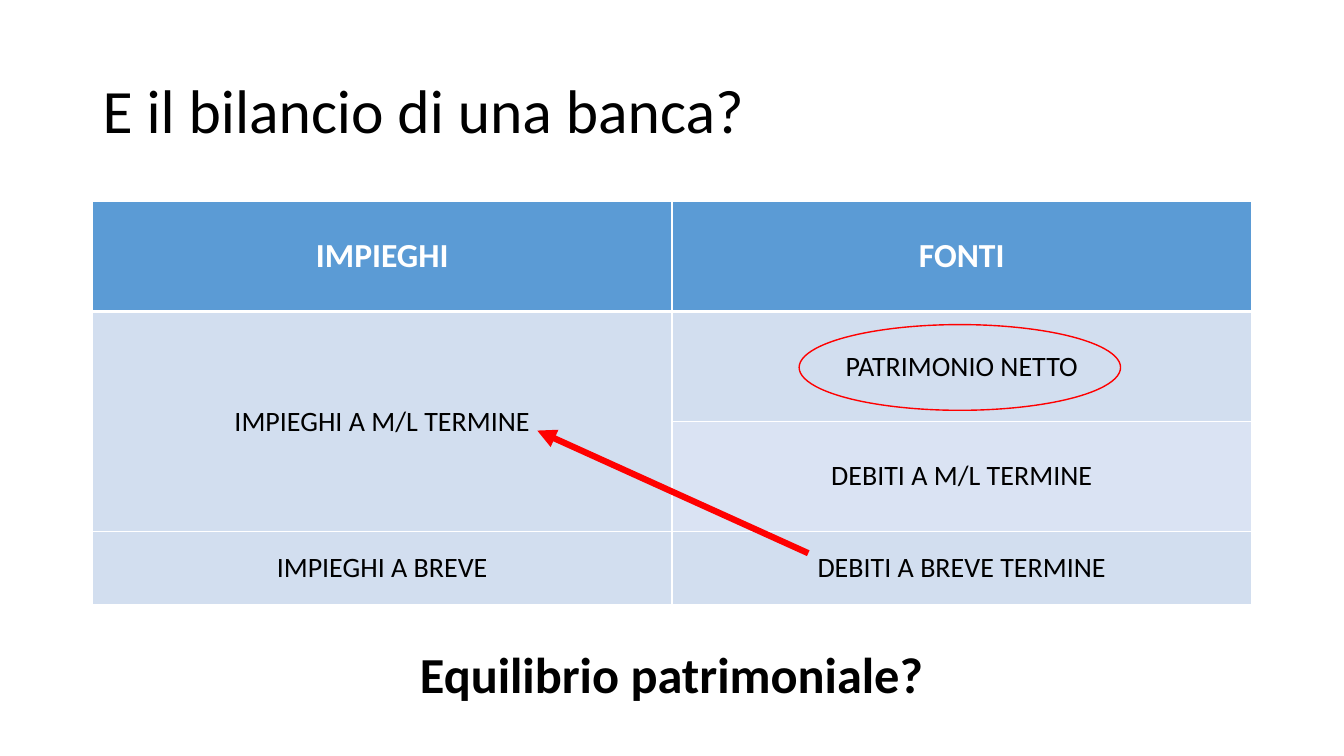
from collections import namedtuple

from lxml import etree
from pptx import Presentation
from pptx.dml.color import RGBColor
from pptx.enum.dml import MSO_FILL
from pptx.enum.shapes import MSO_CONNECTOR, MSO_SHAPE
from pptx.enum.text import MSO_ANCHOR, MSO_AUTO_SIZE, PP_ALIGN
from pptx.oxml.ns import qn
from pptx.util import Cm, Pt

LEFT, CENTER = PP_ALIGN.LEFT, PP_ALIGN.CENTER
MIDDLE, TOP = MSO_ANCHOR.MIDDLE, MSO_ANCHOR.TOP
NO_FIT, GROW = MSO_AUTO_SIZE.NONE, MSO_AUTO_SIZE.SHAPE_TO_FIT_TEXT
STRAIGHT, ELLIPSE = MSO_CONNECTOR.STRAIGHT, MSO_SHAPE.OVAL

Box = namedtuple("Box", "left top width height")
BLACK, WHITE, RED = "000000", "FFFFFF", "FF0000"
HEADER_BLUE, BAND_DARK, BAND_LIGHT = "5B9BD5", "D2DEEF", "DAE3F3"
TITLE_FORMAT = {"size": Pt(44), "bold": False}
HEADER_FORMAT = {"size": Pt(24), "bold": True}
BODY_FORMAT = {"size": Pt(20), "bold": False}
QUESTION_FORMAT = {"size": Pt(36), "bold": True}

ROW_HEIGHTS = [2.77, 2.77, 2.77, 1.85]
BALANCE_ROWS = [
    ("IMPIEGHI", "FONTI"),
    ("IMPIEGHI A M/L TERMINE", "PATRIMONIO NETTO"),
    ("", "DEBITI A M/L TERMINE"),
    ("IMPIEGHI A BREVE", "DEBITI A BREVE TERMINE"),
]
ROW_FILLS = [
    (HEADER_BLUE, HEADER_BLUE),
    (BAND_DARK, BAND_DARK),
    (BAND_DARK, BAND_LIGHT),
    (BAND_DARK, BAND_DARK),
]


def color(value):
    return RGBColor.from_string(value)


def lengths(box):
    return [Cm(value) for value in box]


def write(frame, text, font_format, font_color=BLACK, align=CENTER):
    para = frame.paragraphs[0]
    para.alignment = align
    span = para.add_run()
    span.text = text
    span.font.name = "Calibri"
    span.font.color.rgb = color(font_color)
    for name, value in font_format.items():
        setattr(span.font, name, value)
    return para


def add_title(page, box, text):
    title = page.shapes.title
    title.left, title.top, title.width, title.height = lengths(box)
    frame = title.text_frame
    frame.vertical_anchor = MIDDLE
    frame.auto_size = NO_FIT
    para = write(frame, text, TITLE_FORMAT, align=LEFT)
    para.line_spacing = 0.9


def add_borders(cell, widths):
    properties = cell._tc.get_or_add_tcPr()
    for side, width in widths.items():
        line = etree.SubElement(properties, qn(f"a:ln{side}"), w=str(Pt(width)))
        fill = etree.SubElement(line, qn("a:solidFill"))
        etree.SubElement(fill, qn("a:srgbClr"), val=WHITE)


def add_balance_table(page, box):
    table = page.shapes.add_table(
        len(BALANCE_ROWS), len(BALANCE_ROWS[0]), *lengths(box)
    ).table
    for row, height in zip(table.rows, ROW_HEIGHTS):
        row.height = Cm(height)
    for row_index, texts in enumerate(BALANCE_ROWS):
        is_header = row_index == 0
        font_format = HEADER_FORMAT if is_header else BODY_FORMAT
        font_color = WHITE if is_header else BLACK
        widths = {
            "L": 1,
            "R": 1,
            "T": 3 if row_index == 1 else 1,
            "B": 3 if is_header else 1,
        }
        for column_index, text in enumerate(texts):
            cell = table.cell(row_index, column_index)
            cell.vertical_anchor = MIDDLE
            add_borders(cell, widths)
            cell.fill.solid()
            cell.fill.fore_color.rgb = color(ROW_FILLS[row_index][column_index])
            if text:
                write(cell.text_frame, text, font_format, font_color)
    table.cell(1, 0).merge(table.cell(2, 0))


def add_question(page, box, text):
    frame = page.shapes.add_textbox(*lengths(box)).text_frame
    frame.word_wrap = True
    frame.auto_size = GROW
    frame.vertical_anchor = TOP
    write(frame, text, QUESTION_FORMAT)


def add_highlights(page, box):
    arrow = page.shapes.add_connector(
        STRAIGHT,
        Cm(box.left + 18.04),
        Cm(box.top + 8.86),
        Cm(box.left + 11.21),
        Cm(box.top + 5.77),
    )
    arrow.line.color.rgb = color(RED)
    arrow.line.width = Pt(4.5)
    etree.SubElement(arrow.line._get_or_add_ln(), qn("a:tailEnd"), type="triangle")
    etree.SubElement(arrow._element.spPr, qn("a:effectLst"))

    ring_box = Box(box.left + 17.81, box.top + 3.1, 8.1, 2.16)
    ring = page.shapes.add_shape(ELLIPSE, *lengths(ring_box))
    ring.shadow.inherit = False
    ring.fill.background()
    ring.line.color.rgb = color(RED)
    ring.line.width = Pt(1)


def build_balance_page(deck):
    page = deck.slides.add_slide(deck.slide_layouts[5])
    table_box = Box(2.33, 5.08, 29.21, sum(ROW_HEIGHTS))
    add_title(page, Box(2.33, 1.01, 29.21, 3.68), "E il bilancio di una banca?")
    add_balance_table(page, table_box)
    add_question(page, Box(8.61, 16.08, 16.64, 1.8), "Equilibrio patrimoniale?")
    add_highlights(page, table_box)


def main():
    deck = Presentation()
    deck.slide_width, deck.slide_height = Cm(33.87), Cm(19.05)
    build_balance_page(deck)
    deck.save("out.pptx")


if __name__ == "__main__":
    main()
